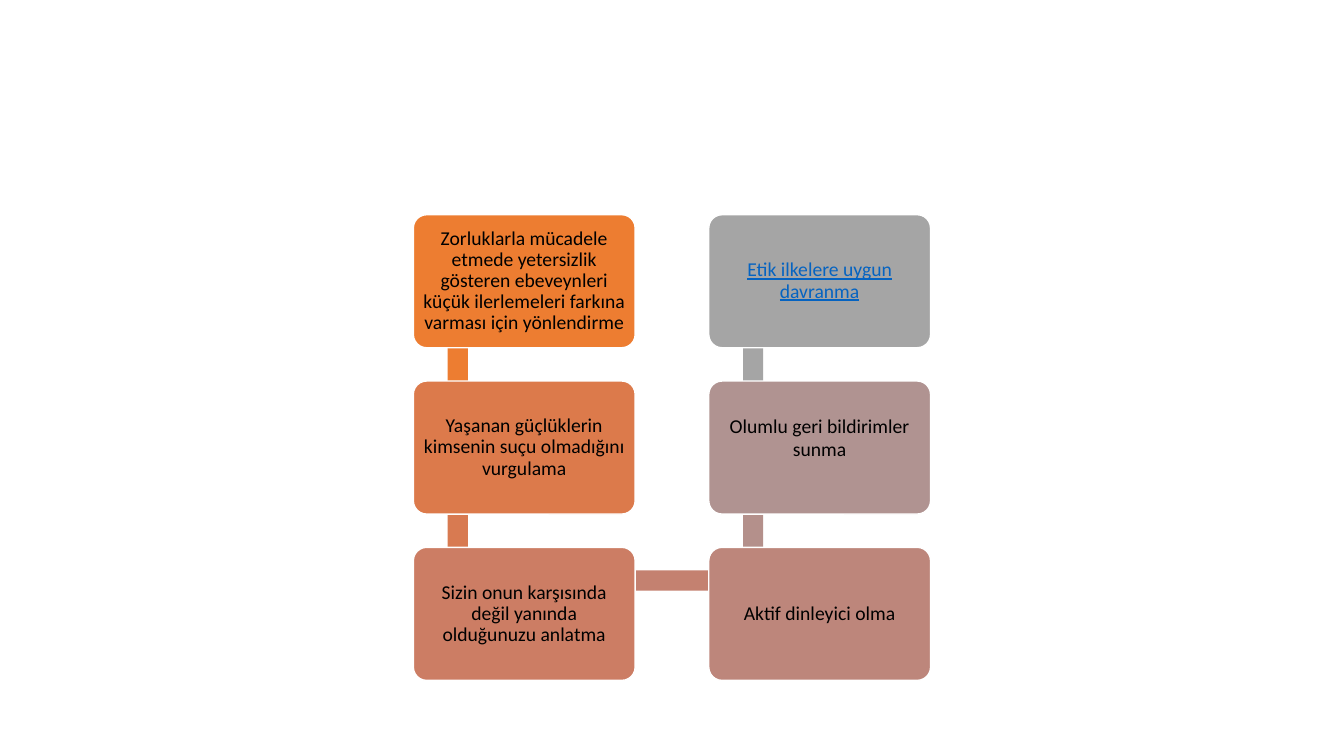
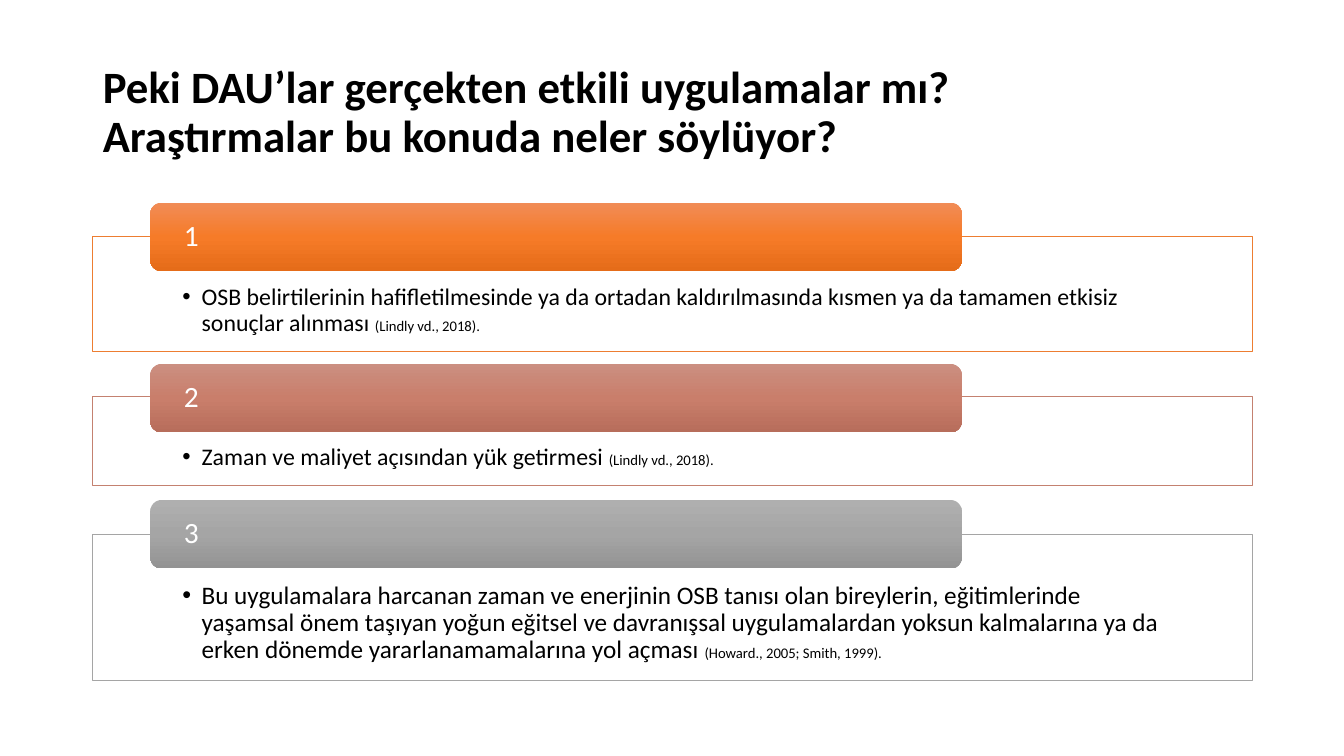
from copy import deepcopy
from itertools import pairwise

from lxml.etree import SubElement
from pptx import Presentation
from pptx.dml.color import RGBColor
from pptx.enum.shapes import MSO_SHAPE as SHAPE
from pptx.enum.text import MSO_ANCHOR as ANCHOR, MSO_AUTO_SIZE as AUTO_SIZE, PP_ALIGN as ALIGN
from pptx.oxml.ns import qn
from pptx.util import Inches, Pt

FONT = "Calibri"
TITLE_ONLY, BLANK = 5, 6
BLACK = RGBColor(0x00, 0x00, 0x00)
WHITE = RGBColor(0xFF, 0xFF, 0xFF)
ORANGE = RGBColor(0xED, 0x7D, 0x31)
ROSE = RGBColor(0xC4, 0x81, 0x70)
GRAY = RGBColor(0xA5, 0xA5, 0xA5)
LINK_BLUE = RGBColor(0x05, 0x63, 0xC1)

# Text, box colour, colour of the bar that leads to the next step
STEPS = [
    ("Zorluklarla mücadele etmede yetersizlik gösteren ebeveynleri küçük "
     "ilerlemeleri farkına varması için yönlendirme", ORANGE, ORANGE),
    ("Yaşanan güçlüklerin kimsenin suçu olmadığını vurgulama",
     RGBColor(0xDC, 0x7A, 0x4B), RGBColor(0xD8, 0x7A, 0x51)),
    ("Sizin onun karşısında değil yanında olduğunuzu anlatma",
     RGBColor(0xCC, 0x7D, 0x64), ROSE),
    ("Aktif dinleyici olma",
     RGBColor(0xBD, 0x86, 0x7B), RGBColor(0xB4, 0x90, 0x8B)),
    ("Olumlu geri bildirimler sunma", RGBColor(0xB0, 0x93, 0x91), GRAY),
    ("Etik ilkelere uygun davranma", GRAY, None),
]
RAISED_STEP, LINKED_STEP = 4, 5
ROWS = 3
STEP_WIDTH, STEP_HEIGHT = 2.2, 1.32
COLUMN_PITCH, ROW_PITCH = 2.93, 1.65
BAR_THICKNESS = 0.2

TITLE_LINES = ["Peki DAU’lar gerçekten etkili uygulamalar mı?",
               "Araştırmalar bu konuda neler söylüyor?"]
# Tab top, panel top, panel height, line colour, tab gradient, finding, text size, citation
FINDINGS = [
    (2.01, 2.35, 1.14, ORANGE, ("F18C57", "F67B28", "E56C19"),
     "OSB belirtilerinin hafifletilmesinde ya da ortadan kaldırılmasında "
     "kısmen ya da tamamen etkisiz sonuçlar alınması ", 17, "(Lindly vd., 2018)."),
    (3.61, 3.93, 0.89, ROSE, ("CB8F81", "C97E6B", "B76D5B"),
     "Zaman ve maliyet açısından yük getirmesi ", 17, "(Lindly vd., 2018)."),
    (4.96, 5.3, 1.45, GRAY, ("AFAFAF", "A5A5A5", "939393"),
     "Bu uygulamalara harcanan zaman ve enerjinin OSB tanısı olan bireylerin, "
     "eğitimlerinde yaşamsal önem taşıyan yoğun eğitsel ve davranışsal "
     "uygulamalardan yoksun kalmalarına ya da erken dönemde "
     "yararlanamamalarına yol açması ", 18, "(Howard., 2005; Smith, 1999)."),
]
CONTENT_LEFT, CONTENT_WIDTH = 0.92, 11.5


def place(item, left, top, width, height):
    item.left, item.top = Inches(left), Inches(top)
    item.width, item.height = Inches(width), Inches(height)


def add_box(page, kind, left, top, width, height, fill=None, line=None, line_width=1):
    box = page.shapes.add_shape(kind, *map(Inches, (left, top, width, height)))
    box.shadow.inherit = False
    if fill is not None:
        box.fill.solid()
        box.fill.fore_color.rgb = fill
    if line is None:
        box.line.fill.background()
    else:
        box.line.color.rgb = line
        box.line.width = Pt(line_width)
    return box


def fill_gradient(box, colors):
    """Fill the box with evenly spaced colours from top to bottom."""
    box.fill.gradient()
    box.fill.gradient_angle = 270
    stop_list = next(box._element.spPr.iter(qn("a:gsLst")))
    while len(stop_list) < len(colors):
        stop_list.append(deepcopy(stop_list[0]))
    for index, (stop, color) in enumerate(zip(box.fill.gradient_stops, colors)):
        stop.color.rgb = RGBColor.from_string(color)
        stop.position = index / (len(colors) - 1)


def set_frame(box, anchor, left, top, right, bottom):
    """Set wrapping, anchor and insets, and return the first paragraph."""
    frame = box.text_frame
    frame.word_wrap = True
    frame.auto_size = AUTO_SIZE.NONE
    frame.vertical_anchor = anchor
    frame.margin_left, frame.margin_top = Inches(left), Inches(top)
    frame.margin_right, frame.margin_bottom = Inches(right), Inches(bottom)
    para = frame.paragraphs[0]
    para.alignment = ALIGN.LEFT
    para.line_spacing = 0.9
    return para


def add_span(para, text, size, color=BLACK, bold=False):
    span = para.add_run()
    span.text = text
    span.font.name = FONT
    span.font.size = Pt(size)
    span.font.color.rgb = color
    span.font.bold = bold
    return span


def add_bullet(para, indent):
    properties = para._p.get_or_add_pPr()
    properties.set("marL", str(Inches(indent)))
    properties.set("indent", str(-Inches(indent)))
    SubElement(properties, qn("a:buFont"), typeface="Arial")
    SubElement(properties, qn("a:buChar"), char="•")


def add_title(page, lines):
    title = page.shapes.title
    place(title, CONTENT_LEFT, 0.4, CONTENT_WIDTH, 1.45)
    para = set_frame(title, ANCHOR.MIDDLE, 0.1, 0.05, 0.1, 0.05)
    for index, line in enumerate(lines):
        if index:
            para.add_line_break()
        add_span(para, line, 32, bold=True)


def add_bar(page, start, end, color):
    """Join two points with a bar that lies level or upright."""
    (x1, y1), (x2, y2) = start, end
    add_box(page, SHAPE.RECTANGLE,
            min(x1, x2) - BAR_THICKNESS / 2, min(y1, y2) - BAR_THICKNESS / 2,
            abs(x2 - x1) + BAR_THICKNESS, abs(y2 - y1) + BAR_THICKNESS, color)


def add_step(page, left, top, index):
    text, color, _ = STEPS[index]
    box = add_box(page, SHAPE.ROUNDED_RECTANGLE, left, top,
                  STEP_WIDTH, STEP_HEIGHT, color, WHITE)
    box.adjustments[0] = 0.1
    raised = index == RAISED_STEP
    para = set_frame(box, ANCHOR.MIDDLE, 0.06, 0.06, 0.06, 0.27 if raised else 0.06)
    para.alignment = ALIGN.CENTER
    if raised:
        para.line_spacing = 1.0
    linked = index == LINKED_STEP
    span = add_span(para, text, 14, LINK_BLUE if linked else BLACK)
    span.font.underline = linked


def add_snake(page, left, top):
    """Run the steps down the first column and up the second."""
    corners = []
    for index in range(len(STEPS)):
        column, row = divmod(index, ROWS)
        if column % 2:
            row = ROWS - 1 - row
        corners.append((left + column * COLUMN_PITCH, top + row * ROW_PITCH))
    joints = [(x + 0.44, y + 0.33) for x, y in corners]
    for (start, end), (_, _, color) in zip(pairwise(joints), STEPS):
        add_bar(page, start, end, color)
    for index, corner in enumerate(corners):
        add_step(page, *corner, index)


def add_finding(page, left, width, number, finding):
    tab_top, top, height, color, gradient, text, size, citation = finding
    panel = add_box(page, SHAPE.RECTANGLE, left, top, width, height, WHITE, color, 0.5)
    para = set_frame(panel, ANCHOR.TOP, 0.89, 0.48, 0.89, 0.13)
    add_bullet(para, 0.19)
    add_span(para, text, size)
    add_span(para, citation, 10.5)

    tab = add_box(page, SHAPE.ROUNDED_RECTANGLE, left + 0.57, tab_top, width * 0.7, 0.68)
    fill_gradient(tab, gradient)
    add_span(set_frame(tab, ANCHOR.MIDDLE, 0.3, 0, 0.3, 0), str(number), 21, WHITE)


def build_steps_slide(deck):
    page = deck.slides.add_slide(deck.slide_layouts[BLANK])
    add_snake(page, 4.1, 2.13)


def build_findings_slide(deck):
    page = deck.slides.add_slide(deck.slide_layouts[TITLE_ONLY])
    add_title(page, TITLE_LINES)
    for number, finding in enumerate(FINDINGS, start=1):
        add_finding(page, CONTENT_LEFT, CONTENT_WIDTH, number, finding)


def main():
    deck = Presentation()
    deck.slide_width, deck.slide_height = Inches(13.33), Inches(7.5)
    build_steps_slide(deck)
    build_findings_slide(deck)
    deck.save("out.pptx")


if __name__ == "__main__":
    main()
